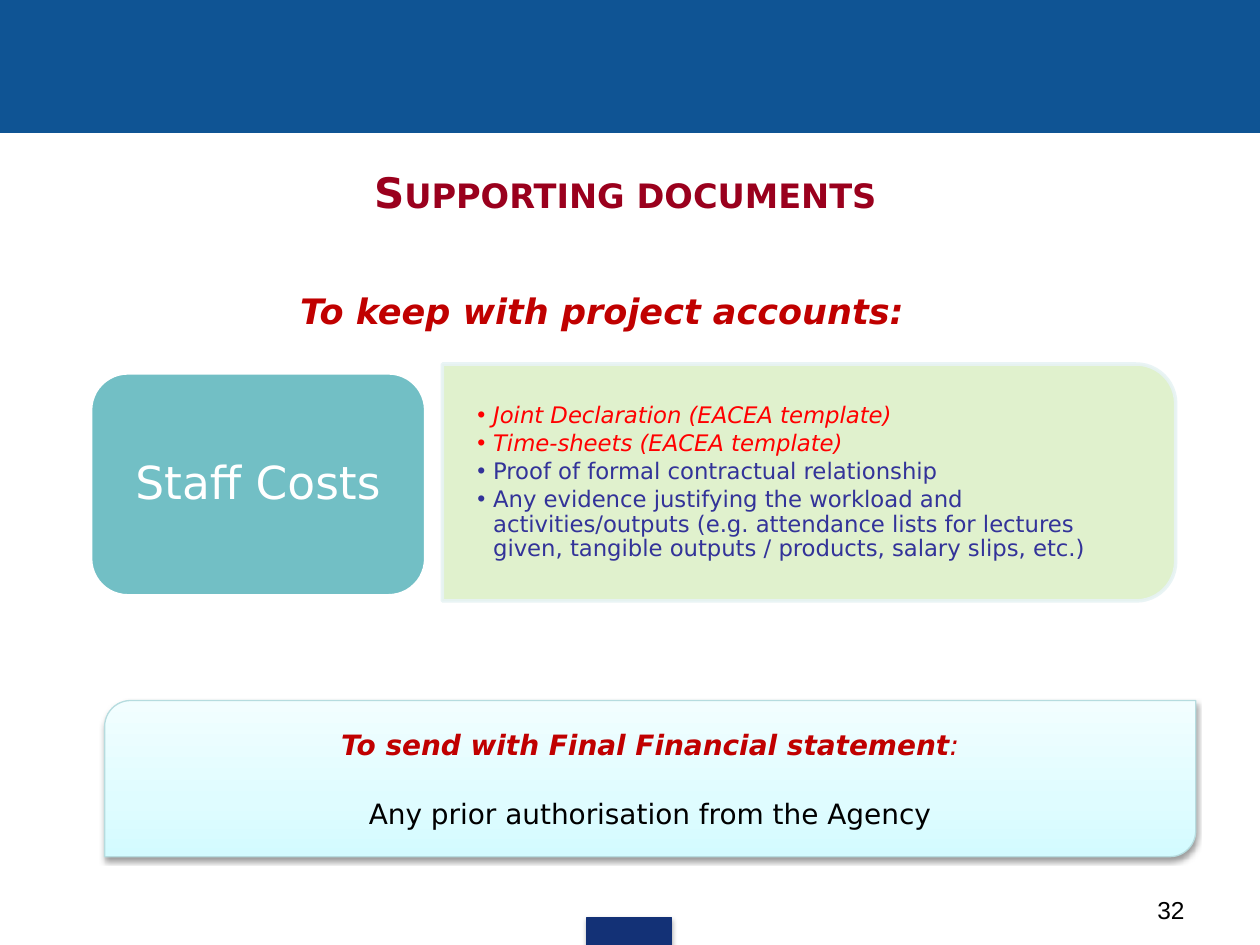
from lxml import etree
from pptx import Presentation
from pptx.dml.color import RGBColor
from pptx.enum.shapes import MSO_SHAPE
from pptx.enum.text import MSO_ANCHOR, PP_ALIGN
from pptx.oxml import parse_xml
from pptx.oxml.ns import nsdecls, qn
from pptx.util import Pt

RECT, ROUND = MSO_SHAPE.RECTANGLE, MSO_SHAPE.ROUNDED_RECTANGLE
SIDE_ROUND = MSO_SHAPE.ROUND_2_SAME_RECTANGLE
DIAGONAL_ROUND = MSO_SHAPE.ROUND_2_DIAG_RECTANGLE
LEFT, CENTER, RIGHT = PP_ALIGN.LEFT, PP_ALIGN.CENTER, PP_ALIGN.RIGHT
TOP, MIDDLE, BOTTOM = MSO_ANCHOR.TOP, MSO_ANCHOR.MIDDLE, MSO_ANCHOR.BOTTOM

TITLE = "Supporting documents"
KEEP_HEADING = "To keep with project accounts:"
CATEGORY = "Staff Costs"
DOCUMENTS = [
    ("Joint Declaration (EACEA template)", "FF0000", True),
    ("Time-sheets (EACEA template)", "FF0000", True),
    ("Proof of formal contractual relationship", "333399", False),
    ("Any evidence justifying the workload and activities/outputs "
     "(e.g. attendance lists for lectures given, tangible outputs / products, "
     "salary slips, etc.)", "333399", False),
]
SEND_HEADING = "To send with Final Financial statement"
SEND_ITEM = "Any prior authorisation from the Agency"
PAGE = "32"
SEND_GRADIENT = [(0, "D3FBFF"), (35, "DFFCFF"), (100, "F2FEFF")]


def rgb(value):
    return RGBColor.from_string(value)


def add_alpha(fill, percent):
    color = fill._xPr.find(qn("a:solidFill"))[0]
    etree.SubElement(color, qn("a:alpha")).set("val", str(percent * 1000))


def add_box(kind, x, y, w, h, fill, line, weight=0.75, alpha=None):
    s = slide.shapes.add_shape(kind, Pt(x), Pt(y), Pt(w), Pt(h))
    s.shadow.inherit = False
    s.fill.solid()
    s.fill.fore_color.rgb = rgb(fill)
    s.line.color.rgb = rgb(line)
    s.line.width = Pt(weight)
    if alpha:
        add_alpha(s.fill, alpha)
        add_alpha(s.line.fill, alpha)
    return s


def add_shadow(s, dist, alpha):
    effects = s._element.spPr.find(qn("a:effectLst"))
    effects.append(parse_xml(
        f'<a:outerShdw {nsdecls("a")} blurRad="{Pt(3.1)}" dist="{Pt(dist)}" '
        f'dir="5400000" rotWithShape="0"><a:srgbClr val="000000">'
        f'<a:alpha val="{alpha * 1000}"/></a:srgbClr></a:outerShdw>'))


def set_gradient(s, stops):
    xml = "".join(f'<a:gs pos="{pos * 1000}"><a:srgbClr val="{color}"/></a:gs>'
                  for pos, color in stops)
    solid = s._element.spPr.find(qn("a:solidFill"))
    solid.getparent().replace(solid, parse_xml(
        f'<a:gradFill {nsdecls("a")} rotWithShape="1"><a:gsLst>{xml}</a:gsLst>'
        f'<a:lin ang="16200000" scaled="0"/></a:gradFill>'))


def set_frame(s, anchor=TOP, inset_x=7.2, inset_y=3.6):
    tf = s.text_frame
    tf.word_wrap = True
    tf.vertical_anchor = anchor
    tf.margin_left = tf.margin_right = Pt(inset_x)
    tf.margin_top = tf.margin_bottom = Pt(inset_y)
    return tf


def add_text_box(x, y, w, h, **frame):
    return set_frame(slide.shapes.add_textbox(Pt(x), Pt(y), Pt(w), Pt(h)), **frame)


def add_run(p, text, size, color, font="DejaVu Sans", bold=False, italic=False):
    r = p.add_run()
    r.text = text
    r.font.size = Pt(size)
    r.font.name = font
    r.font.bold = bold
    r.font.italic = italic
    r.font.color.rgb = rgb(color)
    return r


def add_para(tf, text, size, color, align=CENTER, first=True, before=None,
             after=None, spacing=None, indent=0, hang=0, bullet=None, **font):
    p = tf.paragraphs[0] if first else tf.add_paragraph()
    p.alignment = align
    if before:
        p.space_before = Pt(before)
    if after:
        p.space_after = Pt(after)
    if spacing:
        p.line_spacing = spacing
    pPr = p._p.get_or_add_pPr()
    pPr.set("marL", str(Pt(indent)))
    pPr.set("indent", str(Pt(-hang)))
    if bullet:
        etree.SubElement(pPr, qn("a:buFont")).set("typeface", "Arial")
        etree.SubElement(pPr, qn("a:buChar")).set("char", bullet)
    add_run(p, text, size, color, **font)
    return p


prs = Presentation()
prs.slide_width, prs.slide_height = Pt(720), Pt(540)
slide = prs.slides.add_slide(prs.slide_layouts[6])

add_box(RECT, 0, 0, 720, 75.6, "0F5494", "0F5494")
footer = add_box(RECT, 335.5, 524.2, 48.2, 15.8, "133176", "133176")
add_shadow(footer, 1.8, 35)

tf = add_text_box(127.4, 82.8, 432, 44.6, anchor=BOTTOM)
p = add_para(tf, TITLE, 24, "9A001D", indent=28, bold=True)
p.runs[0].font._element.set("cap", "small")

tf = add_text_box(516.2, 507.9, 167.8, 24)
add_para(tf, PAGE, 14, "000000", align=RIGHT, font="Arial")

panel = add_box(SIDE_ROUND, 394.6, 66.2, 135.4, 419, "DDF0C8", "E7F3F4", 2, alpha=90)
panel.rotation = 90
tf = add_text_box(253.4, 214.6, 411.8, 122.4, anchor=MIDDLE, inset_x=19.4, inset_y=10)
for i, (text, color, italic) in enumerate(DOCUMENTS):
    add_para(tf, text, 13, color, align=LEFT, first=i == 0, after=2, spacing=0.9,
             indent=9, hang=9, bullet="•", italic=italic)

s = add_box(ROUND, 51.8, 213.1, 191.5, 127.4, "72BFC5", "FFFFFF", 2)
add_para(set_frame(s, anchor=MIDDLE), CATEGORY, 26, "FFFFFF", spacing=0.9)

tf = add_text_box(72, 162, 544.3, 55.4)
add_para(tf, KEEP_HEADING, 20, "C00000", bold=True, italic=True)

s = add_box(DIAGONAL_ROUND, 59.8, 400.3, 623.5, 89.3, "D3FBFF", "B6DCDF")
set_gradient(s, SEND_GRADIENT)
add_shadow(s, 1.6, 38)
tf = set_frame(s, anchor=MIDDLE)
p = add_para(tf, SEND_HEADING, 16, "C00000", bold=True, italic=True)
add_run(p, ":", 16, "C00000", italic=True)
add_para(tf, SEND_ITEM, 16, "000000", first=False, before=20)

prs.save("out.pptx")
